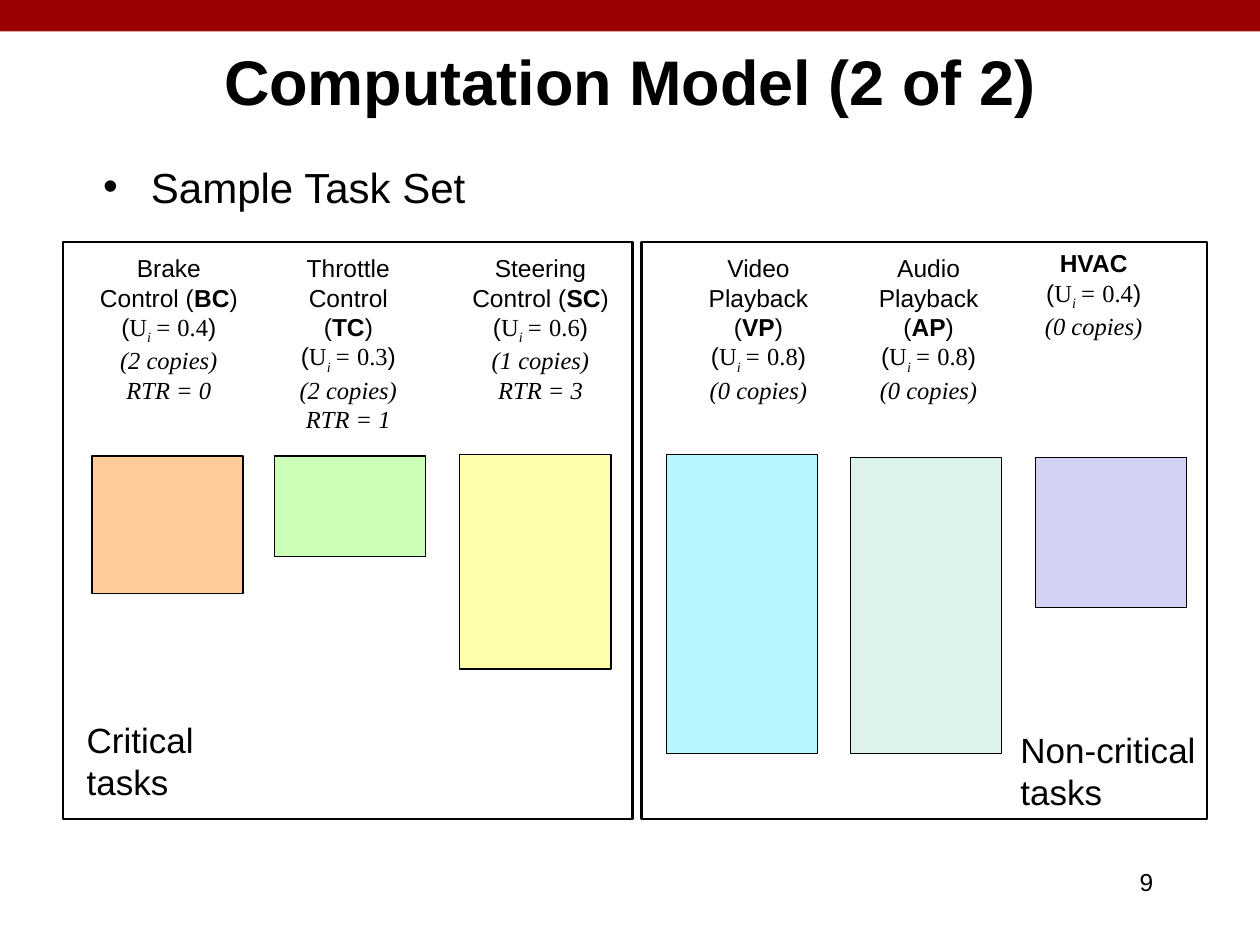
from dataclasses import dataclass

from lxml import etree
from pptx import Presentation
from pptx import util as u
from pptx.dml.color import RGBColor
from pptx.enum import shapes, text
from pptx.oxml import ns

SANS, SERIF = "Arial", "Times New Roman"
LEFT, CENTER, RIGHT = text.PP_ALIGN.LEFT, text.PP_ALIGN.CENTER, text.PP_ALIGN.RIGHT
BLACK = "000000"


def color(hex_value):
    return RGBColor.from_string(hex_value)


def box(*lengths):
    return [u.Inches(n) for n in lengths]


@dataclass
class SlideBuilder:
    """Holds the text style and the slide being filled."""
    slide: object
    font: str = SANS
    ink: str = BLACK

    def fill_paragraph(self, p, runs, size, align):
        """Write (text, format) pairs; a "baseline" format shifts the run."""
        p.alignment = align
        for words, extra in runs:
            r = p.add_run()
            r.text = words
            style = {"name": self.font, "size": u.Pt(size), "bold": False,
                     "italic": False, **extra}
            baseline = style.pop("baseline", None)
            for name, value in style.items():
                setattr(r.font, name, value)
            r.font.color.rgb = color(self.ink)
            if baseline:
                r._r.get_or_add_rPr().set("baseline", str(baseline))

    def title(self, words, at, size):
        sp = self.slide.shapes.title
        sp.left, sp.top, sp.width, sp.height = box(*at)
        tf = sp.text_frame
        tf.auto_size = text.MSO_AUTO_SIZE.NONE
        tf.vertical_anchor = text.MSO_ANCHOR.MIDDLE
        self.fill_paragraph(tf.paragraphs[0], [(words, {"bold": True})], size, CENTER)

    def text(self, lines, at, size, align=LEFT, wrap=True):
        tf = self.slide.shapes.add_textbox(*box(*at)).text_frame
        tf.word_wrap = wrap
        for i, runs in enumerate(lines):
            p = tf.add_paragraph() if i else tf.paragraphs[0]
            self.fill_paragraph(p, runs, size, align)
        return tf

    def bullet(self, words, at, size, indent):
        tf = self.text([[(words, {})]], at, size, wrap=False)
        pPr = tf.paragraphs[0]._p.get_or_add_pPr()
        pPr.set("marL", str(u.Inches(indent)))
        pPr.set("indent", str(-u.Inches(indent)))
        etree.SubElement(pPr, ns.qn("a:buFont"), typeface=self.font)
        etree.SubElement(pPr, ns.qn("a:buChar"), char="•")

    def rect(self, at, fill=None, line=None, width=0.75):
        sp = self.slide.shapes.add_shape(shapes.MSO_SHAPE.RECTANGLE, *box(*at))
        sp.shadow.inherit = False
        if fill:
            sp.fill.solid()
            sp.fill.fore_color.rgb = color(fill)
        else:
            sp.fill.background()
        if line:
            sp.line.color.rgb = color(line)
            sp.line.width = u.Pt(width)
        else:
            sp.line.fill.background()

    def task_label(self, names, load, copies, rtr, at):
        """Names (with *bold* parts), then utilisation, copies and RTR lines."""
        serif = {"name": SERIF}
        slanted = {"name": SERIF, "italic": True}
        lines = [[(part, {"bold": i % 2 == 1})
                  for i, part in enumerate(name.split("*")) if part]
                 for name in names]
        lines.append([("(", {}), ("U", serif), ("i ", {**slanted, "baseline": -25000}),
                      ("= ", slanted), (load, serif), (")", {})])
        lines.append([(f"({copies} copies)", slanted)])
        if rtr is not None:
            lines.append([(f"RTR = {rtr}", slanted)])
        self.text(lines, at, 14, CENTER)


# names, load, copies, RTR, label (left, top, width, height), bar (left, top, height), fill
TASKS = [
    (["Brake", "Control (*BC*)"], "0.4", 2, 0,
     (0.68, 1.96, 1.32, 1.28), (0.73, 3.62, 1.09), "FFCC99"),
    (["Throttle", "Control (*TC*)"], "0.3", 2, 1,
     (2.16, 1.96, 1.21, 1.51), (2.18, 3.62, 0.8), "CCFFB7"),
    (["Steering", "Control (*SC*)"], "0.6", 1, 3,
     (3.63, 1.96, 1.32, 1.28), (3.65, 3.61, 1.7), "FFFFAB"),
    (["Video", "Playback (*VP*)"], "0.8", 0, None,
     (5.36, 1.96, 1.32, 1.28), (5.29, 3.61, 2.37), "B9F5FD"),
    (["Audio Playback", "(*AP*)"], "0.8", 0, None,
     (6.71, 1.96, 1.32, 1.28), (6.75, 3.63, 2.35), "DDF3EA"),
    (["*HVAC*"], "0.4", 0, None,
     (8.02, 1.92, 1.32, 0.81), (8.22, 3.63, 1.19), "D2D2F4"),
]
BAR_WIDTH = 1.2

# caption, frame left and width, caption left, top and width
GROUPS = [
    ("Critical tasks", 0.5, 4.52, (0.59, 5.65, 1.57)),
    ("Non-critical tasks", 5.09, 4.49, (8, 5.73, 1.95)),
]


def main():
    prs = Presentation()
    prs.slide_width, prs.slide_height = box(10, 7.5)
    s = SlideBuilder(prs.slides.add_slide(prs.slide_layouts[5]))

    s.rect((0, 0, 10, 0.25), "990000")
    s.title("Computation Model (2 of 2)", (0, 0.01, 10, 1.25), 36)
    s.bullet("Sample Task Set", (0.72, 1.23, 3.1, 0.5), 24, 0.38)

    for names, load, copies, rtr, label_at, (left, top, height), fill in TASKS:
        s.rect((left, top, BAR_WIDTH, height), fill, BLACK)
        s.task_label(names, load, copies, rtr, label_at)

    for caption, left, width, caption_at in GROUPS:
        s.rect((left, 1.92, width, 4.58), line=BLACK, width=1.5)
        s.text([[(caption, {})]], (*caption_at, 0.77), 20)

    s.text([[("9", {})]], (7.17, 6.83, 2.08, 0.5), 14, RIGHT)
    prs.save("out.pptx")


if __name__ == "__main__":
    main()
